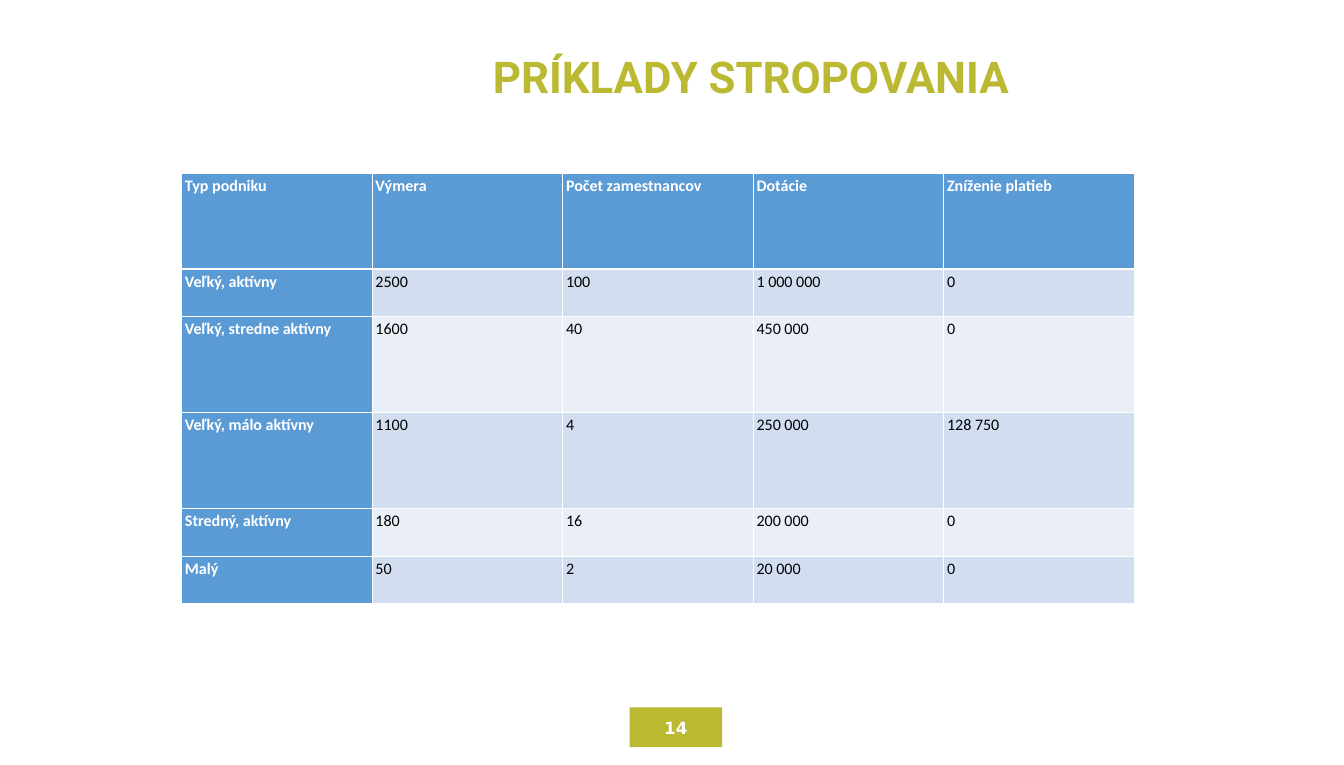
from dataclasses import dataclass

from lxml import etree
from pptx import Presentation
from pptx.dml.color import RGBColor
from pptx.enum.shapes import MSO_SHAPE
from pptx.enum.text import MSO_ANCHOR, PP_ALIGN
from pptx.oxml.ns import qn
from pptx.util import Pt

RECTANGLE = MSO_SHAPE.RECTANGLE
MIDDLE, TOP = MSO_ANCHOR.MIDDLE, MSO_ANCHOR.TOP
CENTER, LEFT = PP_ALIGN.CENTER, PP_ALIGN.LEFT
TITLE_ONLY = 5


@dataclass(frozen=True)
class Theme:
    olive: str = "BBB831"
    blue: str = "5B9BD5"
    bands: tuple = ("D2DEEF", "EAEFF7")
    white: str = "FFFFFF"
    black: str = "000000"
    title_font: str = "Roboto"
    table_font: str = "Calibri"
    number_font: str = "DejaVu Sans"
    title_size: float = 60
    table_size: float = 22
    number_size: float = 23
    thin: float = 1
    thick: float = 3


class SlideBuilder:
    def __init__(self, slide, theme):
        self.slide = slide
        self.theme = theme

    def add_text(self, tf, text, font, size, color, bold=True, align=CENTER, spacing=1.0):
        p = tf.paragraphs[0]
        p.alignment = align
        p.line_spacing = spacing
        r = p.add_run()
        r.text = text
        for name, value in dict(name=font, size=Pt(size), bold=bold).items():
            setattr(r.font, name, value)
        r.font.color.rgb = RGBColor.from_string(color)

    def title(self, text, *box):
        t = self.theme
        sp = self.slide.shapes.title
        sp.left, sp.top, sp.width, sp.height = map(Pt, box)
        tf = sp.text_frame
        tf.word_wrap = True
        tf.vertical_anchor = MIDDLE
        self.add_text(tf, text, t.title_font, t.title_size, t.olive)

    def page_number(self, text, *box):
        t = self.theme
        sp = self.slide.shapes.add_shape(RECTANGLE, *map(Pt, box))
        sp.shadow.inherit = False
        sp.fill.solid()
        sp.fill.fore_color.rgb = RGBColor.from_string(t.olive)
        sp.line.fill.background()
        tf = sp.text_frame
        frame = dict(vertical_anchor=MIDDLE, margin_left=Pt(16.5), margin_right=Pt(16.5),
                     margin_top=Pt(8), margin_bottom=Pt(8))
        for name, value in frame.items():
            setattr(tf, name, value)
        self.add_text(tf, text, t.number_font, t.number_size, t.white)

    def borders(self, cell, top, bottom):
        """Draw white lines on all four sides, with the given widths above and below."""
        t = self.theme
        tc_pr = cell._tc.get_or_add_tcPr()
        sides = dict(lnL=t.thin, lnR=t.thin, lnT=top, lnB=bottom)
        for i, (side, width) in enumerate(sides.items()):
            ln = etree.Element(qn(f"a:{side}"), w=str(Pt(width)))
            fill = etree.SubElement(ln, qn("a:solidFill"))
            etree.SubElement(fill, qn("a:srgbClr"), val=t.white)
            tc_pr.insert(i, ln)

    def cell(self, cell, text, row, col):
        t = self.theme
        heading = row == 0 or col == 0
        layout = dict(margin_left=Pt(5), margin_right=Pt(5), margin_top=0,
                      margin_bottom=0, vertical_anchor=TOP)
        for name, value in layout.items():
            setattr(cell, name, value)
        fill = t.blue if heading else t.bands[(row - 1) % 2]
        cell.fill.solid()
        cell.fill.fore_color.rgb = RGBColor.from_string(fill)
        self.borders(cell, t.thick if row == 1 else t.thin, t.thick if row == 0 else t.thin)
        self.add_text(cell.text_frame, text, t.table_font, t.table_size,
                      t.white if heading else t.black, heading, LEFT, 1.15)

    def table(self, rows, heights, left, top, col_width):
        cols = len(rows[0])
        frame = self.slide.shapes.add_table(len(rows), cols, Pt(left), Pt(top),
                                            Pt(col_width * cols), Pt(sum(heights)))
        table = frame.table
        table.first_col = True
        for column in table.columns:
            column.width = Pt(col_width)
        for i, (values, height) in enumerate(zip(rows, heights)):
            table.rows[i].height = Pt(height)
            for j, text in enumerate(values):
                self.cell(table.cell(i, j), text, i, j)


FARMS = [
    ("Typ podniku", "Výmera", "Počet zamestnancov", "Dotácie", "Zníženie platieb"),
    ("Veľký, aktívny", "2500", "100", "1 000 000", "0"),
    ("Veľký, stredne aktívny", "1600", "40", "450 000", "0"),
    ("Veľký, málo aktívny", "1100", "4", "250 000", "128 750"),
    ("Stredný, aktívny", "180", "16", "200 000", "0"),
    ("Malý", "50", "2", "20 000", "0"),
]
ROW_LINES = (2, 1, 2, 2, 1, 1)
LINE_HEIGHT = 65.6


def main():
    prs = Presentation()
    prs.slide_width, prs.slide_height = Pt(1842.5), Pt(1049)
    s = prs.slides.add_slide(prs.slide_layouts[TITLE_ONLY])
    builder = SlideBuilder(s, Theme())
    builder.title("PRÍKLADY STROPOVANIA", 218, 64, 1623, 81.5)
    builder.page_number("14", 863.3, 970, 126.7, 54.7)
    builder.table(FARMS, [n * LINE_HEIGHT for n in ROW_LINES], 248.6, 237.6, 261.2)
    prs.save("out.pptx")


if __name__ == "__main__":
    main()
